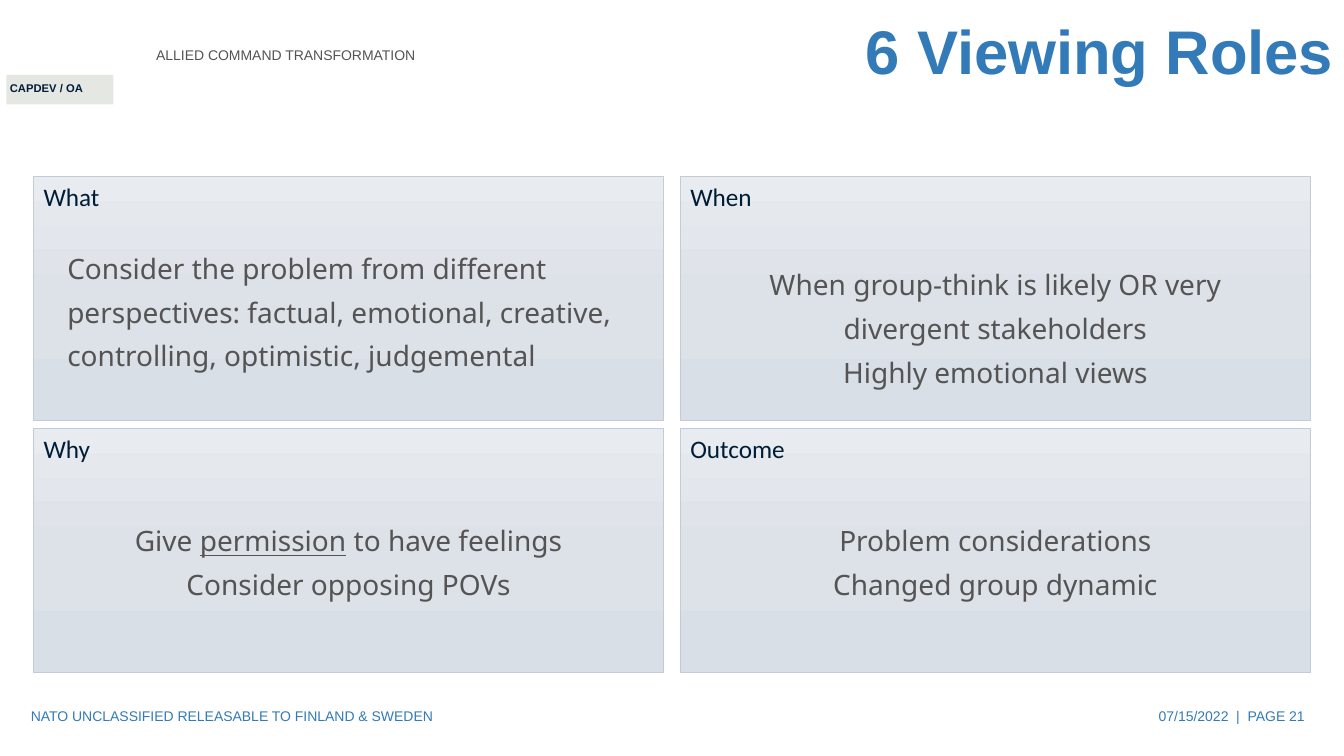
from copy import deepcopy
from dataclasses import dataclass

from pptx import Presentation
from pptx.dml.color import RGBColor
from pptx.enum.shapes import MSO_SHAPE
from pptx.enum.text import MSO_ANCHOR, PP_ALIGN
from pptx.util import Pt


@dataclass(frozen=True)
class Theme:
    blue: str = "327BB8"
    navy: str = "001D38"
    grey: str = "545454"
    tag_fill: str = "E5E7E3"
    card_line: str = "C3CCD6"
    card_stops: tuple = ((0, "E8EBEF"), (0.5, "DDE2E8"), (1, "D9DFE6"))
    font: str = "Arial"
    card_font: str = "Calibri"
    body_font: str = "Noto Sans"
    title_size: int = 44
    body_size: int = 20
    card_size: int = 18
    small_size: int = 10
    tag_size: int = 8


T = Theme()


def rgb(value):
    return RGBColor.from_string(value)


def write(sp, paragraphs, size=T.small_size, color=T.blue, font=T.font, bold=False,
          align=PP_ALIGN.LEFT, anchor=MSO_ANCHOR.MIDDLE, spacing=None, wrap=True):
    """Fill a shape; a paragraph is a string or a list of (text, underline)."""
    tf = sp.text_frame
    tf.word_wrap = wrap
    tf.vertical_anchor = anchor
    for i, runs in enumerate(paragraphs):
        p = tf.add_paragraph() if i else tf.paragraphs[0]
        p.alignment = align
        p.line_spacing = spacing
        for text, underline in [(runs, None)] if isinstance(runs, str) else runs:
            r = p.add_run()
            r.text = text
            r.font.size = Pt(size)
            r.font.name = font
            r.font.bold = bold
            r.font.underline = underline
            r.font.color.rgb = rgb(color)


def add_text(s, box, paragraphs, **fmt):
    write(s.shapes.add_textbox(*map(Pt, box)), paragraphs, **fmt)


def add_rect(s, box):
    sp = s.shapes.add_shape(MSO_SHAPE.RECTANGLE, *map(Pt, box))
    sp.shadow.inherit = False
    return sp


def shade(fill, stops):
    """Vertical gradient through all the given stops."""
    fill.gradient()
    fill.gradient_angle = 270
    gs_list = fill._xPr.find(".//{*}gsLst")
    while len(gs_list) < len(stops):
        gs_list.append(deepcopy(gs_list[0]))
    for stop, (position, color) in zip(fill.gradient_stops, stops):
        stop.position = position
        stop.color.rgb = rgb(color)


def add_header(s, x, y, w, h):
    add_text(s, (x + 104.4, y + 18, 425.5, 42.5), ["ALLIED COMMAND TRANSFORMATION"],
             color=T.grey)
    # Department tag
    tag = add_rect(s, (x + 4.5, y + 53.5, 76.5, 21))
    tag.fill.solid()
    tag.fill.fore_color.rgb = rgb(T.tag_fill)
    tag.line.fill.background()
    add_text(s, (x, y + 54.7, 67, 17.3), ["CAPDEV / OA"], size=T.tag_size,
             color=T.navy, bold=True, anchor=MSO_ANCHOR.TOP, wrap=False)
    # Title
    add_text(s, (x + 132, y, w - 132, h), ["6 Viewing Roles"], size=T.title_size,
             bold=True, align=PP_ALIGN.RIGHT, spacing=0.9)


def add_card(s, x, y, w, h, heading, body, middle, body_h, align=PP_ALIGN.CENTER):
    """Shaded card; its body text is centred at `middle` below the card top."""
    card = add_rect(s, (x, y, w, h))
    shade(card.fill, T.card_stops)
    card.line.color.rgb = rgb(T.card_line)
    card.line.width = Pt(0.5)
    write(card, [heading], size=T.card_size, color=T.navy, font=T.card_font,
          anchor=MSO_ANCHOR.TOP)
    add_text(s, (x + 17, y + middle - body_h / 2, w - 34, body_h), body,
             size=T.body_size, color=T.grey, font=T.body_font, align=align, spacing=1.3)


def add_cards(s, x, y, w, h):
    gap_x, gap_y = 12, 6
    card_w, card_h = (w - gap_x) / 2, (h - gap_y) / 2
    cards = [
        dict(heading="What", middle=93.2, body_h=101.5, align=PP_ALIGN.LEFT,
             body=["Consider the problem from different perspectives: factual, "
                   "emotional, creative, controlling, optimistic, judgemental"]),
        dict(heading="When", middle=104.8, body_h=101.5,
             body=["When group-think is likely OR very divergent stakeholders",
                   "Highly emotional views"]),
        dict(heading="Why", middle=92.2, body_h=70.6,
             body=[[("Give ", None), ("permission", True), (" to have feelings", None)],
                   "Consider opposing POVs"]),
        dict(heading="Outcome", middle=92.2, body_h=70.6,
             body=["Problem considerations", "Changed group dynamic"]),
    ]
    for i, card in enumerate(cards):
        row, col = divmod(i, 2)
        add_card(s, x + col * (card_w + gap_x), y + row * (card_h + gap_y),
                 card_w, card_h, **card)


def add_footer(s, x, y, w, h):
    add_text(s, (x, y, 324, h), ["NATO UNCLASSIFIED RELEASABLE TO FINLAND & SWEDEN"])
    add_text(s, (x + w - 216, y, 216, h), ["07/15/2022  |  PAGE 21"],
             align=PP_ALIGN.RIGHT)


def main():
    prs = Presentation()
    prs.slide_width, prs.slide_height = Pt(960), Pt(540)
    s = prs.slides.add_slide(prs.slide_layouts[6])
    add_header(s, 0, 0, 960, 78)
    add_cards(s, 24, 126, 912, 354)
    add_footer(s, 15, 497, 924, 29)
    prs.save("out.pptx")


if __name__ == "__main__":
    main()
